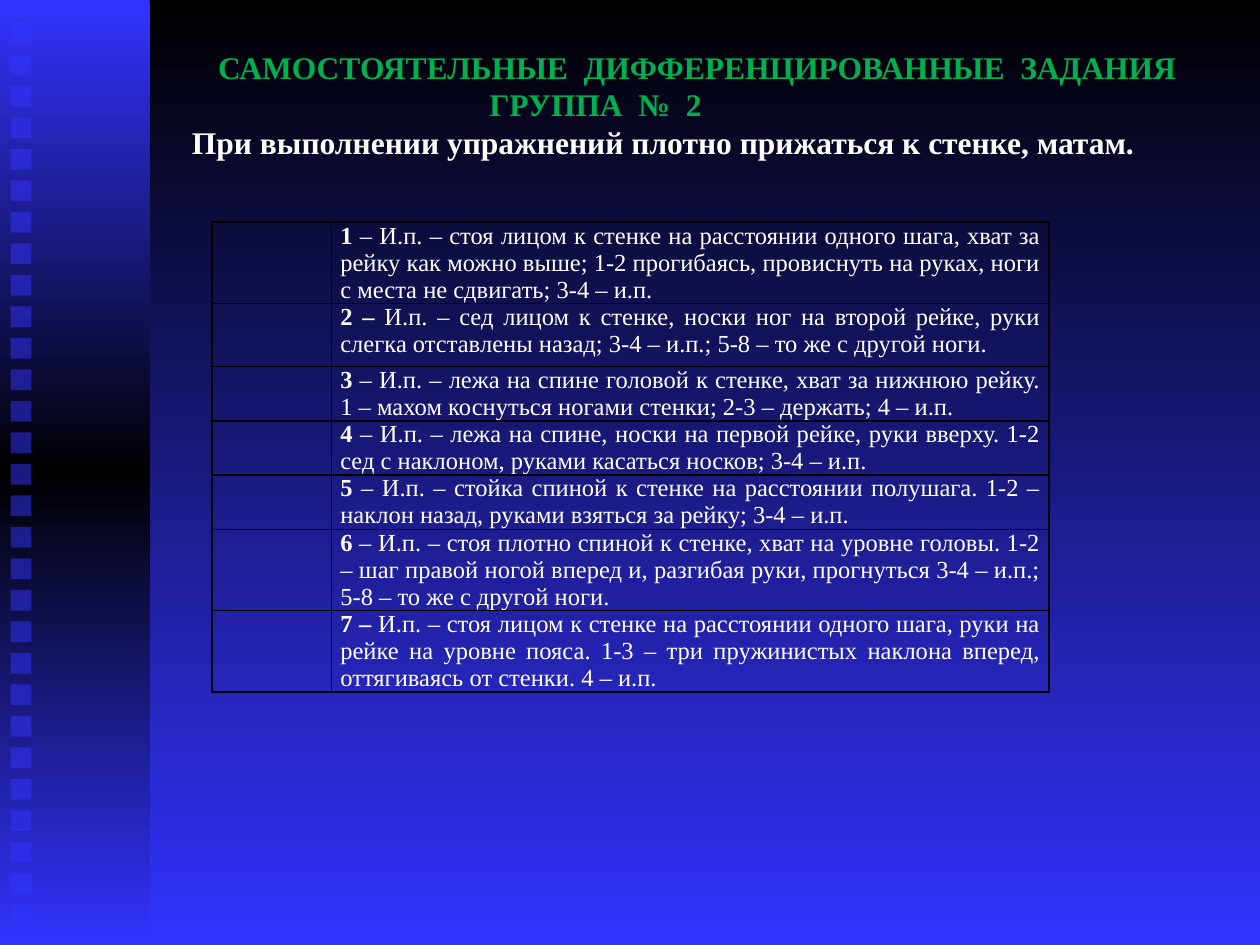
from copy import deepcopy

from lxml.etree import SubElement
from pptx import Presentation
from pptx.dml.color import RGBColor
from pptx.enum.shapes import MSO_SHAPE as Shape
from pptx.enum.text import MSO_ANCHOR as Anchor, MSO_AUTO_SIZE as AutoSize, PP_ALIGN as Align
from pptx.oxml.ns import qn
from pptx.util import Pt

FONT = "Times New Roman"
BLUE, BLACK, WHITE, GREEN = "3333FF", "000000", "FFFFFF", "00B050"

HEADING = [
    ("САМОСТОЯТЕЛЬНЫЕ  ДИФФЕРЕНЦИРОВАННЫЕ  ЗАДАНИЯ", 78, GREEN),
    ("ГРУППА  №  2", 233, GREEN),
    ("При выполнении упражнений плотно прижаться к стенке, матам.", 63, WHITE),
]

EXERCISES = [
    (46.5, "1", " – И.п. – стоя лицом к стенке на расстоянии одного шага, хват за рейку как можно выше; "
     "1-2 прогибаясь, провиснуть на руках, ноги с места не сдвигать; 3-4 – и.п."),
    (36, "2 – ", "И.п. – сед лицом к стенке, носки ног на второй рейке, руки слегка отставлены назад; "
     "3-4 – и.п.; 5-8 – то же с другой ноги."),
    (31, "3", " – И.п. – лежа на спине головой к стенке, хват за нижнюю рейку. "
     "1 – махом коснуться ногами стенки; 2-3 – держать; 4 – и.п."),
    (31, "4 ", "– И.п. – лежа на спине, носки на первой рейке, руки вверху. "
     "1-2 сед с наклоном, руками касаться носков; 3-4 – и.п."),
    (31, "5 ", "– И.п. – стойка спиной к стенке на расстоянии полушага. "
     "1-2 – наклон назад, руками взяться за рейку; 3-4 – и.п."),
    (46.5, "6 ", "– И.п. – стоя плотно спиной к стенке, хват на уровне головы. "
     "1-2 – шаг правой ногой вперед и, разгибая руки, прогнуться 3-4 – и.п.; 5-8 – то же с другой ноги."),
    (46.5, "7 – ", "И.п. – стоя лицом к стенке на расстоянии одного шага, руки на рейке на уровне пояса. "
     "1-3 – три пружинистых наклона вперед, оттягиваясь от стенки. 4 – и.п."),
]


def rgb(value):
    """Return the colour for a hex string."""
    return RGBColor.from_string(value)


def fill_gradient(fill, element, colors):
    """Fill from top to bottom with evenly spaced colours."""
    fill.gradient()
    fill.gradient_angle = 270
    stop_list = element.find(".//" + qn("a:gsLst"))
    while len(stop_list) < len(colors):
        stop_list.append(deepcopy(stop_list[0]))
    for index, (stop, color) in enumerate(zip(fill.gradient_stops, colors)):
        stop.color.rgb = rgb(color)
        stop.position = index / (len(colors) - 1)


def add_rectangle(shapes, left, top, width, height):
    """Add a rectangle without line or shadow."""
    shape = shapes.add_shape(Shape.RECTANGLE, Pt(left), Pt(top), Pt(width), Pt(height))
    shape.shadow.inherit = False
    shape.line.fill.background()
    return shape


def add_side_strip(slide):
    """Add the gradient strip with its column of translucent squares."""
    shapes = slide.shapes.add_group_shape().shapes
    strip = add_rectangle(shapes, 0, 0, 85.5, 540)
    fill_gradient(strip.fill, strip._element, [BLUE, BLACK, BLUE])
    for index in range(29):
        square = add_rectangle(shapes, 6, 13 + 18 * index, 12, 12)
        square.fill.solid()
        square.fill.fore_color.rgb = rgb(BLUE)
        color = square._element.spPr.find(".//" + qn("a:srgbClr"))
        SubElement(color, qn("a:alpha"), val="50000")


def format_font(font, size, color, bold=None):
    """Set the typeface, size, colour and weight of a font."""
    font.name, font.size, font.bold = FONT, Pt(size), bold
    font.color.rgb = rgb(color)


def fill_title(title):
    """Place the title and write its indented lines."""
    title.left, title.top, title.width, title.height = Pt(39.5), Pt(22.5), Pt(664), Pt(94.5)
    frame = title.text_frame
    frame.auto_size = AutoSize.NONE
    frame.word_wrap = True
    frame.vertical_anchor = Anchor.MIDDLE
    frame.margin_bottom = Pt(24)
    frame.text = "\n".join(text for text, _, _ in HEADING)
    for paragraph, (_, indent, color) in zip(frame.paragraphs, HEADING):
        paragraph.alignment = Align.LEFT
        paragraph._p.get_or_add_pPr().set("marL", str(Pt(indent)))
        format_font(paragraph.font, 18, color, True)


def format_cell(cell):
    """Clear the fill, set the margins and draw thin black borders."""
    cell.margin_left = cell.margin_right = Pt(5)
    cell.margin_top = cell.margin_bottom = 0
    properties = cell._tc.get_or_add_tcPr()
    for side in ("lnL", "lnR", "lnT", "lnB"):
        line = SubElement(properties, qn("a:" + side), w=str(Pt(1)))
        SubElement(SubElement(line, qn("a:solidFill")), qn("a:srgbClr"), val=BLACK)
    cell.fill.background()


def add_exercise_table(slide):
    """Add the table of numbered exercises."""
    height = sum(row_height for row_height, _, _ in EXERCISES)
    table = slide.shapes.add_table(
        len(EXERCISES), 2, Pt(121), Pt(127), Pt(478.5), Pt(height)).table
    table.first_row = table.horz_banding = False
    table.columns[0].width, table.columns[1].width = Pt(68.5), Pt(410)
    for row, (row_height, number, text) in zip(table.rows, EXERCISES):
        row.height = Pt(row_height)
        for cell in row.cells:
            format_cell(cell)
        paragraph = row.cells[1].text_frame.paragraphs[0]
        paragraph.alignment = Align.JUSTIFY
        format_font(paragraph.font, 14, WHITE)
        for content, bold in ((number, True), (text, False)):
            run = paragraph.add_run()
            run.text = content
            run.font.bold = bold


def main():
    """Build and save the slide."""
    presentation = Presentation()
    presentation.slide_width, presentation.slide_height = Pt(720), Pt(540)
    slide = presentation.slides.add_slide(presentation.slide_layouts[5])
    fill_gradient(slide.background.fill, slide._element, [BLACK, BLUE])
    add_side_strip(slide)
    add_exercise_table(slide)
    fill_title(slide.shapes.title)
    presentation.save("out.pptx")


if __name__ == "__main__":
    main()
